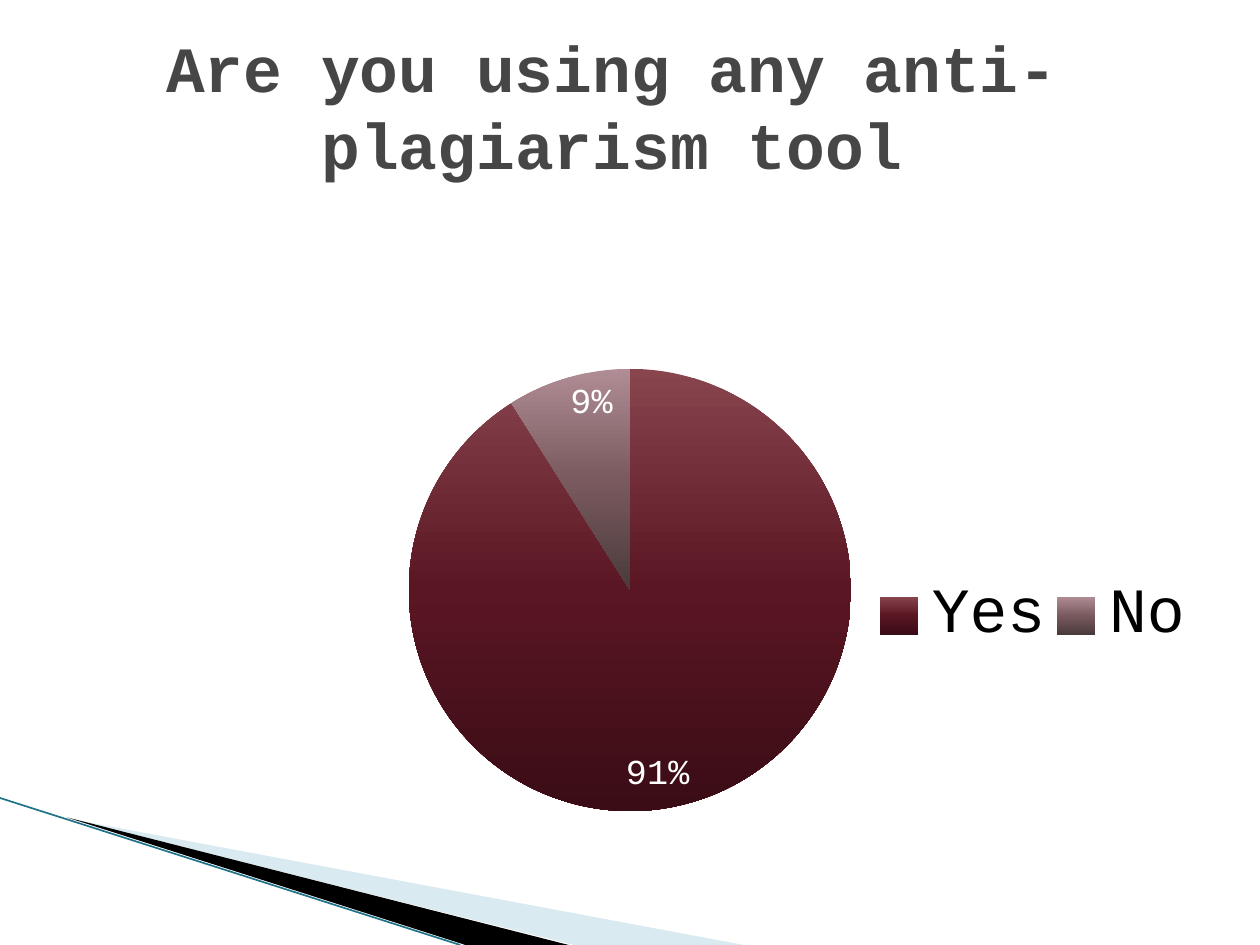
from dataclasses import dataclass

from lxml.etree import SubElement
from pptx import Presentation
from pptx.chart.data import CategoryChartData
from pptx.dml.color import RGBColor
from pptx.enum.chart import XL_CHART_TYPE, XL_LABEL_POSITION, XL_LEGEND_POSITION
from pptx.enum.shapes import MSO_CONNECTOR
from pptx.enum.text import MSO_ANCHOR, MSO_AUTO_SIZE, PP_ALIGN
from pptx.oxml import parse_xml
from pptx.oxml.ns import nsdecls, qn
from pptx.util import Pt


@dataclass(frozen=True)
class Theme:
    font: str = "Courier New"
    title: str = "464646"
    text: str = "000000"
    label: str = "FFFFFF"
    pale: str = "A0CBDC"
    dark: str = "000000"
    edge: str = "1F7388"
    yes: tuple = ("88454E", "5A1622", "3A0C15")
    no: tuple = ("B08D94", "7A5A5F", "4A3A3B")
    head: float = 36.9
    key: float = 36
    value: float = 20
    base: float = 10


THEME = Theme()


def style(font, size, color, bold=False):
    font.name = THEME.font
    font.size = Pt(size)
    font.bold = bold
    font.color.rgb = RGBColor.from_string(color)


def add_wedge(slide, points, color, alpha=100):
    build = slide.shapes.build_freeform(*points[0], scale=Pt(1))
    build.add_line_segments(points[1:], close=True)
    shape = build.convert_to_shape()
    shape.shadow.inherit = False
    shape.fill.solid()
    shape.fill.fore_color.rgb = RGBColor.from_string(color)
    shape.line.fill.background()
    if alpha < 100:
        tone = next(shape.element.spPr.iter(qn("a:srgbClr")))
        SubElement(tone, qn("a:alpha")).set("val", str(alpha * 1000))


def add_edge(slide, start, end, color):
    ends = [Pt(n) for n in (*start, *end)]
    line = slide.shapes.add_connector(MSO_CONNECTOR.STRAIGHT, *ends)
    line.line.color.rgb = RGBColor.from_string(color)
    line.line.width = Pt(0.95)
    SubElement(line.element.spPr, qn("a:effectLst"))


def set_title(slide, text, box):
    title = slide.shapes.title
    title.left, title.top, title.width, title.height = map(Pt, box)
    frame = title.text_frame
    frame.word_wrap = True
    frame.auto_size = MSO_AUTO_SIZE.NONE
    frame.vertical_anchor = MSO_ANCHOR.MIDDLE
    para = frame.paragraphs[0]
    para.alignment = PP_ALIGN.CENTER
    run = para.add_run()
    run.text = text
    style(run.font, THEME.head, THEME.title, True)


def shade(point, tones):
    stops = "".join(
        f'<a:gs pos="{i * 50000}"><a:srgbClr val="{tone}"/></a:gs>'
        for i, tone in enumerate(tones)
    )
    point.format.line.fill.background()
    grad = parse_xml(
        f'<a:gradFill {nsdecls("a")} rotWithShape="1"><a:gsLst>{stops}</a:gsLst>'
        '<a:lin ang="5400000" scaled="0"/></a:gradFill>'
    )
    point.format._element.get_or_add_spPr().insert(0, grad)


def place(node, box, inner=False):
    for old in node.findall(qn("c:layout")):
        node.remove(old)
    target = '<c:layoutTarget val="inner"/>' if inner else ""
    sides = "".join(f'<c:{k}Mode val="edge"/>' for k in "xy")
    sizes = "".join(f'<c:{k} val="{v}"/>' for k, v in zip("xywh", box))
    layout = parse_xml(
        f'<c:layout {nsdecls("c")}><c:manualLayout>{target}{sides}{sizes}'
        "</c:manualLayout></c:layout>"
    )
    node.insert(0 if inner else 1, layout)


def add_pie(slide, box, slices):
    data = CategoryChartData()
    data.categories = [name for name, _, _ in slices]
    data.add_series("Series 1", [value for _, value, _ in slices])
    chart = slide.shapes.add_chart(XL_CHART_TYPE.PIE, *map(Pt, box), data).chart
    style(chart.font, THEME.base, THEME.text)
    chart.has_title = False
    chart.has_legend = True
    legend = chart.legend
    legend.position = XL_LEGEND_POSITION.TOP
    legend.include_in_layout = False
    style(legend.font, THEME.key, THEME.text)
    plot = chart.plots[0]
    plot.vary_by_categories = True
    for i, (_, _, tones) in enumerate(slices):
        shade(plot.series[0].points[i], tones)
    labels = plot.series[0].data_labels
    labels.show_percentage = True
    labels.show_value = False
    labels.number_format = "0%"
    labels.number_format_is_linked = False
    labels.position = XL_LABEL_POSITION.INSIDE_END
    style(labels.font, THEME.value, THEME.label)
    area = chart.element.chart
    place(area.plotArea, (0.305, 0.264, 0.39, 0.71), inner=True)
    place(area.find(qn("c:legend")), (0.71, 0.58, 0.29, 0.16))


def main():
    deck = Presentation()
    deck.slide_width, deck.slide_height = Pt(720), Pt(540)
    slide = deck.slides.add_slide(deck.slide_layouts[5])
    for mark in list(slide.placeholders)[1:]:
        mark.element.getparent().remove(mark.element)
    add_wedge(slide, [(39.6, 468), (425, 540), (328, 540)], THEME.pale, 40)
    add_wedge(slide, [(38.2, 467.3), (325, 540), (266, 540)], THEME.dark)
    add_edge(slide, (0, 456), (263, 540), THEME.edge)
    pie = [("Yes", 91, THEME.yes), ("No", 9, THEME.no)]
    add_pie(slide, (36, 116.6, 648, 356.4), pie)
    set_title(slide, "Are you using any anti-plagiarism tool", (0, 12.2, 700, 95.8))
    deck.save("out.pptx")


if __name__ == "__main__":
    main()
